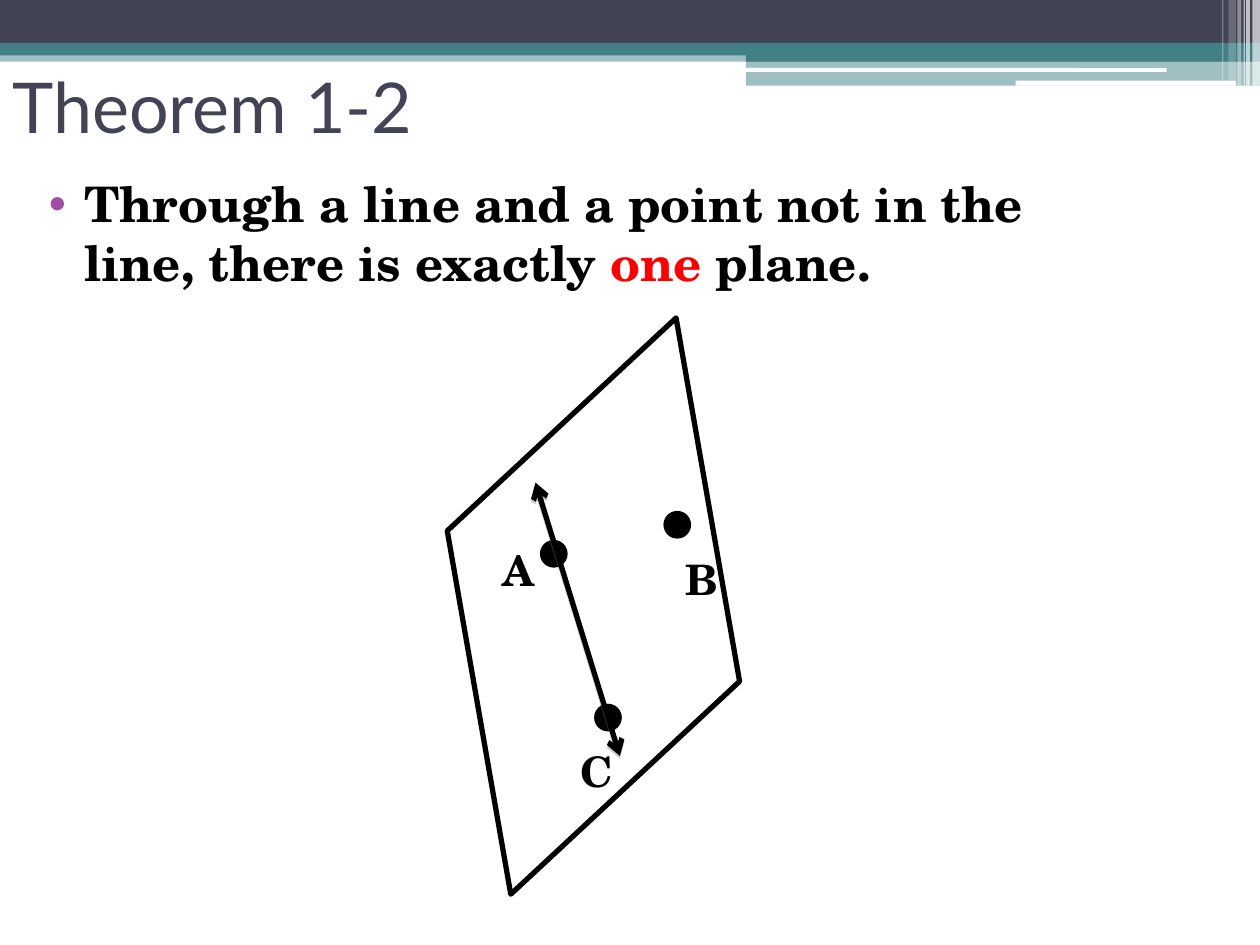
from lxml import etree
from pptx import Presentation
from pptx.dml.color import RGBColor
from pptx.enum.shapes import MSO_CONNECTOR, MSO_SHAPE
from pptx.enum.text import MSO_ANCHOR, PP_ALIGN
from pptx.oxml.ns import qn
from pptx.util import Inches, Pt

NAVY = RGBColor(0x42, 0x44, 0x56)
TEAL = RGBColor(0x43, 0x80, 0x86)
WHITE = RGBColor(0xFF, 0xFF, 0xFF)
BLACK = RGBColor(0x00, 0x00, 0x00)
RED = RGBColor(0xFF, 0x00, 0x00)
PURPLE = RGBColor(0xA0, 0x4D, 0xA3)
GRAY = RGBColor(0x80, 0x80, 0x80)
SERIF = "TeX Gyre Schola"

BANDS = [
    (0, 0.4, 10, 0.09, TEAL, 50),
    (0, 0, 10, 0.34, NAVY, 100),
    (0, 0.34, 10, 0.1, TEAL, 100),
    (5.92, 0.39, 4.08, 0.1, TEAL, 100),
    (5.92, 0.48, 4.08, 0.2, TEAL, 50),
]
HIGHLIGHTS = [(5.91, 0.54, 3.35, 0.03), (8.06, 0.64, 1.75, 0.04)]
STRIPES = [
    (9.94, 0.06, 0.68, 65),
    (9.89, 0.03, 0.68, 65),
    (9.87, 0.01, 0.68, 60),
    (9.82, 0.03, 0.68, 40),
    (9.75, 0.06, 0.64, 20),
    (9.7, 0.01, 0.64, 30),
]
POINTS = [
    ("C", 4.72, 5.59, 4.51, 5.87),
    ("B", 5.27, 4.06, 5.34, 4.34),
    ("A", 4.29, 4.29, 3.89, 4.27),
]


def add_child(parent, tag, **attributes):
    """Append an XML child with the given attributes."""
    child = etree.SubElement(parent, qn(tag))
    for name, value in attributes.items():
        child.set(name, str(value))
    return child


def add_color(parent, color, opacity):
    """Append a colour with an opacity in percent."""
    element = add_child(parent, "a:srgbClr", val=color)
    add_child(element, "a:alpha", val=opacity * 1000)


def add_figure(slide, kind, left, top, width, height, fill=None, opacity=100, line=None, weight=1):
    """Add a preset shape with optional fill and outline."""
    shape = slide.shapes.add_shape(kind, Inches(left), Inches(top), Inches(width), Inches(height))
    shape.shadow.inherit = False
    if fill is None:
        shape.fill.background()
    else:
        shape.fill.solid()
        shape.fill.fore_color.rgb = fill
        if opacity < 100:
            color = shape.fill._xPr.find(qn("a:solidFill"))[0]
            add_child(color, "a:alpha", val=opacity * 1000)
    if line is None:
        shape.line.fill.background()
    else:
        shape.line.color.rgb = line
        shape.line.width = Pt(weight)
    return shape


def add_run(paragraph, text, font=SERIF, size=24, color=BLACK, bold=True):
    """Append formatted text to a paragraph."""
    run = paragraph.add_run()
    run.text = text
    run.font.name = font
    run.font.size = Pt(size)
    run.font.color.rgb = color
    run.font.bold = bold


def add_text_box(slide, left, top, width, height):
    """Add a wrapping text box and return its first paragraph."""
    box = slide.shapes.add_textbox(Inches(left), Inches(top), Inches(width), Inches(height))
    box.text_frame.word_wrap = True
    return box.text_frame.paragraphs[0]


def add_header(slide):
    """Draw the banded header with its stripes."""
    for left, top, width, height, color, opacity in BANDS:
        add_figure(slide, MSO_SHAPE.RECTANGLE, left, top, width, height, color, opacity)
    for bounds in HIGHLIGHTS:
        add_figure(slide, MSO_SHAPE.ROUNDED_RECTANGLE, *bounds, fill=WHITE)
    for left, width, height, opacity in STRIPES:
        add_figure(slide, MSO_SHAPE.RECTANGLE, left, 0, width, height, WHITE, opacity)


def add_point(slide, label, left, top, label_left, label_top):
    """Draw a labelled point."""
    add_figure(slide, MSO_SHAPE.OVAL, left, top, 0.21, 0.21, BLACK, line=BLACK, weight=0.75)
    add_run(add_text_box(slide, label_left, label_top, 0.41, 0.91), label)


def add_plane(slide):
    """Draw the tilted plane."""
    plane = add_figure(slide, MSO_SHAPE.PARALLELOGRAM, 2.57, 3.77, 4.28, 2.08, line=BLACK, weight=3)
    plane.adjustments[0] = 0.65
    plane.rotation = 80.1
    plane._element.spPr.find(qn("a:xfrm")).set("flipH", "1")


def add_double_arrow(slide, start, end):
    """Draw a line with an arrowhead at each end and a soft shadow."""
    ends = [Inches(value) for value in (*start, *end)]
    line = slide.shapes.add_connector(MSO_CONNECTOR.STRAIGHT, *ends)
    line.line.color.rgb = BLACK
    line.line.width = Pt(3)
    outline = line.line._get_or_add_ln()
    for tag in ("a:headEnd", "a:tailEnd"):
        add_child(outline, tag, type="arrow")
    effects = add_child(line._element.spPr, "a:effectLst")
    shadow = add_child(effects, "a:outerShdw", dist=Pt(1.6), dir=90 * 60000, rotWithShape=0)
    add_color(shadow, GRAY, 38)


def add_title(slide, text):
    """Place and format the title."""
    title = slide.shapes.title
    title.left, title.top, title.width, title.height = map(Inches, (0, 0.25, 9, 1.17))
    title.text_frame.vertical_anchor = MSO_ANCHOR.MIDDLE
    paragraph = title.text_frame.paragraphs[0]
    paragraph.alignment = PP_ALIGN.LEFT
    add_run(paragraph, text, font="Lato", size=40, color=NAVY, bold=False)


def add_theorem(slide):
    """Add the bulleted statement of the theorem."""
    paragraph = add_text_box(slide, 0.17, 1.33, 9, 1.33)
    paragraph.space_before = Pt(3)
    properties = paragraph._p.get_or_add_pPr()
    properties.set("marL", str(Inches(0.4)))
    properties.set("indent", str(Inches(-0.28)))
    add_color(add_child(properties, "a:buClr"), PURPLE, 100)
    add_child(properties, "a:buFont", typeface="Arial")
    add_child(properties, "a:buChar", char="•")
    add_run(paragraph, "Through a line and a point not in the line, there is exactly ", size=28)
    add_run(paragraph, "one ", size=28, color=RED)
    add_run(paragraph, "plane.", size=28)


def main():
    """Build and save the slide."""
    presentation = Presentation()
    presentation.slide_width, presentation.slide_height = Inches(10), Inches(7.5)
    slide = presentation.slides.add_slide(presentation.slide_layouts[5])
    add_header(slide)
    for point in POINTS:
        add_point(slide, *point)
    add_plane(slide)
    add_double_arrow(slide, (4.25, 3.83), (4.92, 6))
    add_title(slide, "Theorem 1-2")
    add_theorem(slide)
    presentation.save("out.pptx")


if __name__ == "__main__":
    main()
